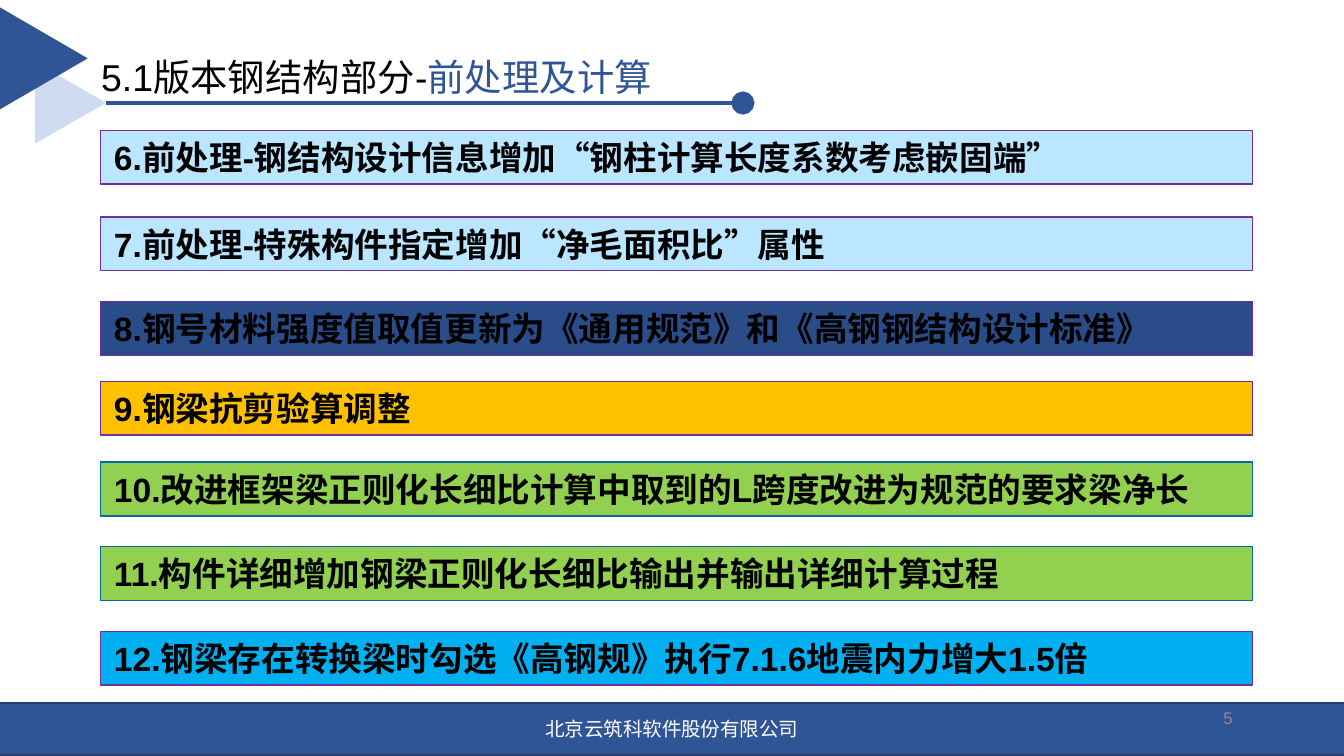
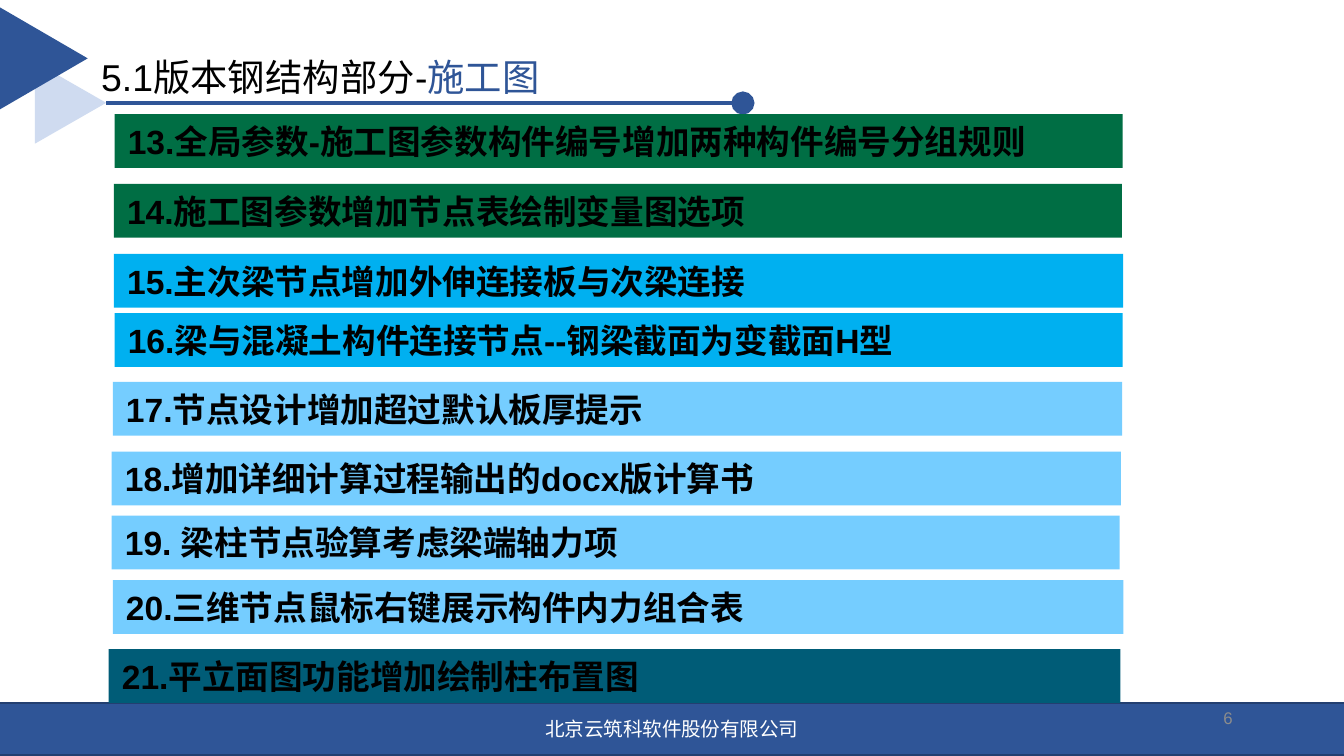
from dataclasses import dataclass

from lxml.etree import SubElement
from pptx import Presentation
from pptx.dml.color import RGBColor
from pptx.enum.shapes import MSO_CONNECTOR, MSO_SHAPE
from pptx.enum.text import MSO_ANCHOR, MSO_AUTO_SIZE, PP_ALIGN
from pptx.oxml.ns import qn
from pptx.util import Pt


@dataclass(frozen=True)
class Theme:
    font: str = "Arial"
    black: str = "000000"
    white: str = "FFFFFF"
    gray: str = "8C8C8C"
    navy: str = "2F5597"
    navy_edge: str = "233F70"
    mist: str = "CFDBF0"
    pale: str = "BAE6FF"
    sky: str = "75CDFF"
    azure: str = "00B0F0"
    indigo: str = "2A4C88"
    amber: str = "FFC000"
    lime: str = "92D050"
    forest: str = "006E44"
    teal: str = "005C77"
    purple: str = "7030A0"
    blue_edge: str = "006AA6"
    title_size: float = 20
    bar_size: float = 18
    footer_size: float = 10.5
    number_size: float = 9


THEME = Theme()
COMPANY = "北京云筑科软件股份有限公司"
SECTION = "5.1版本钢结构部分-"
BAR_HEIGHT = 28.8

CALCULATION_LEFT, CALCULATION_WIDTH = 54, 617
CALCULATION_BARS = [
    (69.8, THEME.pale, THEME.purple, "6.前处理-钢结构设计信息增加“钢柱计算长度系数考虑嵌固端”"),
    (116.2, THEME.pale, THEME.purple, "7.前处理-特殊构件指定增加“净毛面积比”属性"),
    (161.6, THEME.indigo, THEME.purple, "8.钢号材料强度值取值更新为《通用规范》和《高钢钢结构设计标准》"),
    (204.3, THEME.amber, THEME.purple, "9.钢梁抗剪验算调整"),
    (247.6, THEME.lime, THEME.blue_edge, "10.改进框架梁正则化长细比计算中取到的L跨度改进为规范的要求梁净长"),
    (292.9, THEME.lime, THEME.blue_edge, "11.构件详细增加钢梁正则化长细比输出并输出详细计算过程"),
    (338.2, THEME.azure, THEME.purple, "12.钢梁存在转换梁时勾选《高钢规》执行7.1.6地震内力增大1.5倍"),
]

DRAWING_BARS = [
    (61.4, 61.2, 540, THEME.forest, "13.全局参数-施工图参数构件编号增加两种构件编号分组规则"),
    (61, 98.6, 540, THEME.forest, "14.施工图参数增加节点表绘制变量图选项"),
    (61, 136.1, 540.7, THEME.azure, "15.主次梁节点增加外伸连接板与次梁连接"),
    (61.4, 167.8, 540, THEME.azure, "16.梁与混凝土构件连接节点--钢梁截面为变截面H型"),
    (60.4, 204.6, 540.7, THEME.sky, "17.节点设计增加超过默认板厚提示"),
    (59.8, 242, 540.7, THEME.sky, "18.增加详细计算过程输出的docx版计算书"),
    (59.8, 276.3, 540, THEME.sky, "19. 梁柱节点验算考虑梁端轴力项"),
    (60.4, 310.8, 541.4, THEME.sky, "20.三维节点鼠标右键展示构件内力组合表"),
    (58.2, 347.8, 542, THEME.teal, "21.平立面图功能增加绘制柱布置图"),
]


class SlideBuilder:
    def __init__(self, deck, theme):
        self.deck = deck
        self.theme = theme
        self.page = None

    def start(self, topic, number):
        self.page = self.deck.slides.add_slide(self.deck.slide_layouts[5])
        self.footer()
        self.page_number(number)
        self.title(topic)
        self.triangle(15.9, 36, 43.8, 38.2, self.theme.mist)
        self.triangle(-3.8, 7.8, 54.6, 47, self.theme.navy)
        self.title_rule()

    def style(self, font, size, color, bold=False):
        font.name = self.theme.font
        font.size = Pt(size)
        font.bold = bold
        font.color.rgb = RGBColor.from_string(color)

    def shape(self, kind, left, top, width, height, fill, edge=None, edge_width=0.75):
        shape = self.page.shapes.add_shape(kind, Pt(left), Pt(top), Pt(width), Pt(height))
        shape.shadow.inherit = False
        shape.fill.solid()
        shape.fill.fore_color.rgb = RGBColor.from_string(fill)
        if edge:
            shape.line.color.rgb = RGBColor.from_string(edge)
            shape.line.width = Pt(edge_width)
        else:
            shape.line.fill.background()
        return shape

    def set_text(self, shape, text, size, color, align, anchor, bold=False):
        frame = shape.text_frame
        frame.word_wrap = True
        frame.vertical_anchor = anchor
        frame.text = text
        para = frame.paragraphs[0]
        para.alignment = align
        for span in para.runs:
            self.style(span.font, size, color, bold)

    def footer(self):
        band = self.shape(MSO_SHAPE.RECTANGLE, -0.7, 376.8, 721.4, 27.6,
                          self.theme.navy, self.theme.navy_edge, 1)
        self.set_text(band, COMPANY, self.theme.footer_size, self.theme.white,
                      PP_ALIGN.CENTER, MSO_ANCHOR.MIDDLE)

    def page_number(self, number):
        box = self.page.shapes.add_textbox(Pt(508.5), Pt(375.3), Pt(159), Pt(18.7))
        self.set_text(box, str(number), self.theme.number_size, self.theme.gray,
                      PP_ALIGN.RIGHT, MSO_ANCHOR.MIDDLE)

    def title(self, topic):
        title = self.page.shapes.title
        title.left, title.top, title.width, title.height = Pt(47), Pt(21.6), Pt(559.4), Pt(35.3)
        self.set_text(title, SECTION, self.theme.title_size, self.theme.black,
                      PP_ALIGN.LEFT, MSO_ANCHOR.BOTTOM)
        title.text_frame.auto_size = MSO_AUTO_SIZE.NONE
        span = title.text_frame.paragraphs[0].add_run()
        span.text = topic
        self.style(span.font, self.theme.title_size, self.theme.navy)

    def triangle(self, left, top, width, height, fill):
        triangle = self.shape(MSO_SHAPE.ISOSCELES_TRIANGLE, left, top, width, height, fill)
        triangle.rotation = 90

    def title_rule(self):
        rule = self.page.shapes.add_connector(
            MSO_CONNECTOR.STRAIGHT, Pt(56.9), Pt(55.2), Pt(398), Pt(55.2))
        rule.line.color.rgb = RGBColor.from_string(self.theme.navy)
        rule.line.width = Pt(2.5)
        properties = rule._element.spPr
        SubElement(properties.find(qn("a:ln")), qn("a:tailEnd"), type="oval", w="lg", len="lg")
        SubElement(properties, qn("a:effectLst"))

    def bar(self, left, top, width, fill, text, edge=None):
        bar = self.shape(MSO_SHAPE.RECTANGLE, left, top, width, BAR_HEIGHT, fill, edge)
        self.set_text(bar, text, self.theme.bar_size, self.theme.black,
                      PP_ALIGN.LEFT, MSO_ANCHOR.TOP, bold=True)
        bar.text_frame.auto_size = MSO_AUTO_SIZE.SHAPE_TO_FIT_TEXT


def main():
    deck = Presentation()
    deck.slide_width, deck.slide_height = Pt(720), Pt(405)
    builder = SlideBuilder(deck, THEME)

    builder.start("前处理及计算", 5)
    for top, fill, edge, text in CALCULATION_BARS:
        builder.bar(CALCULATION_LEFT, top, CALCULATION_WIDTH, fill, text, edge)

    builder.start("施工图", 6)
    for left, top, width, fill, text in DRAWING_BARS:
        builder.bar(left, top, width, fill, text)

    deck.save("out.pptx")


if __name__ == "__main__":
    main()
